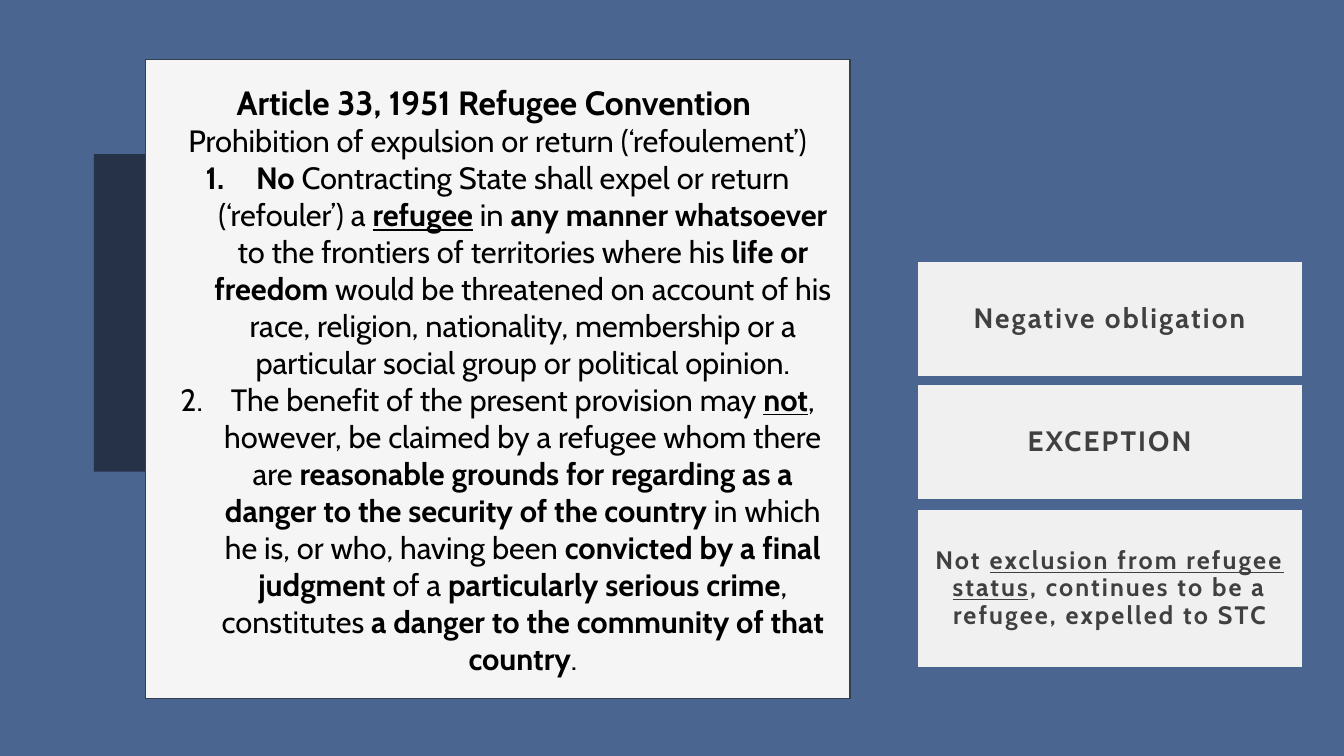
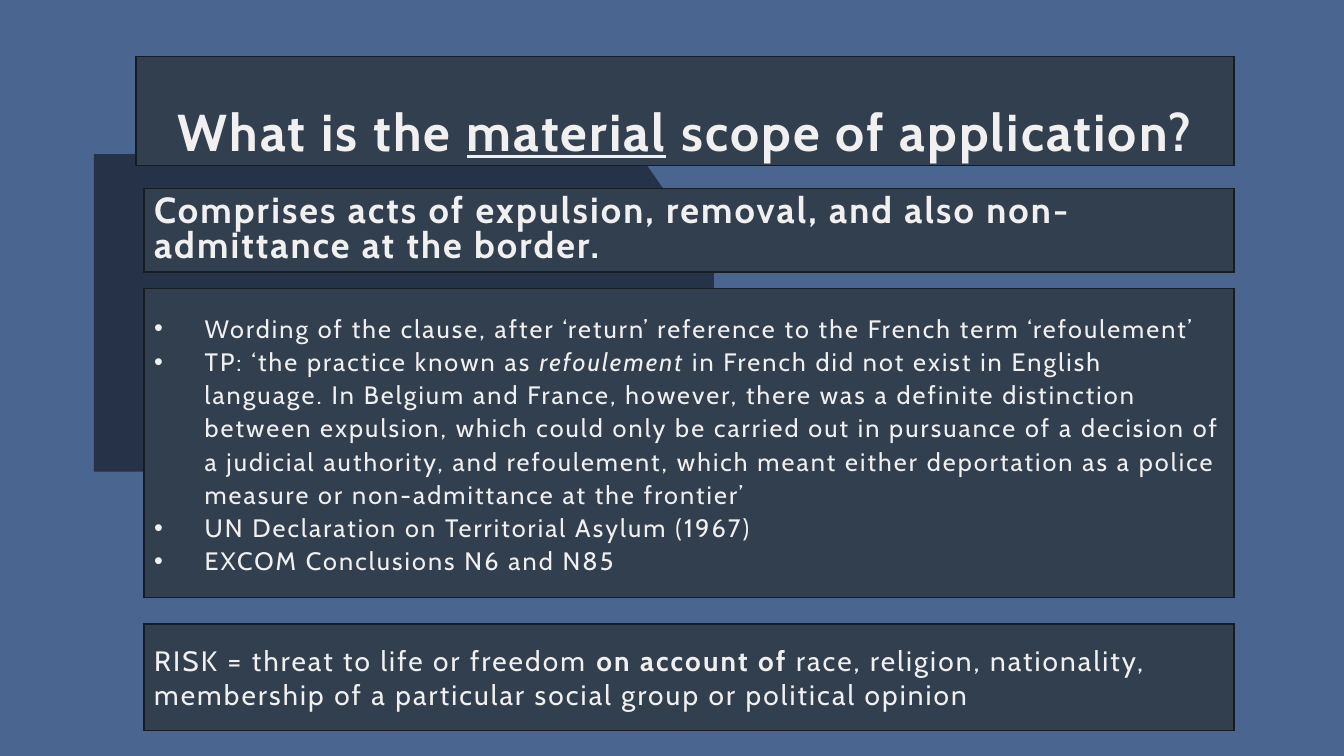
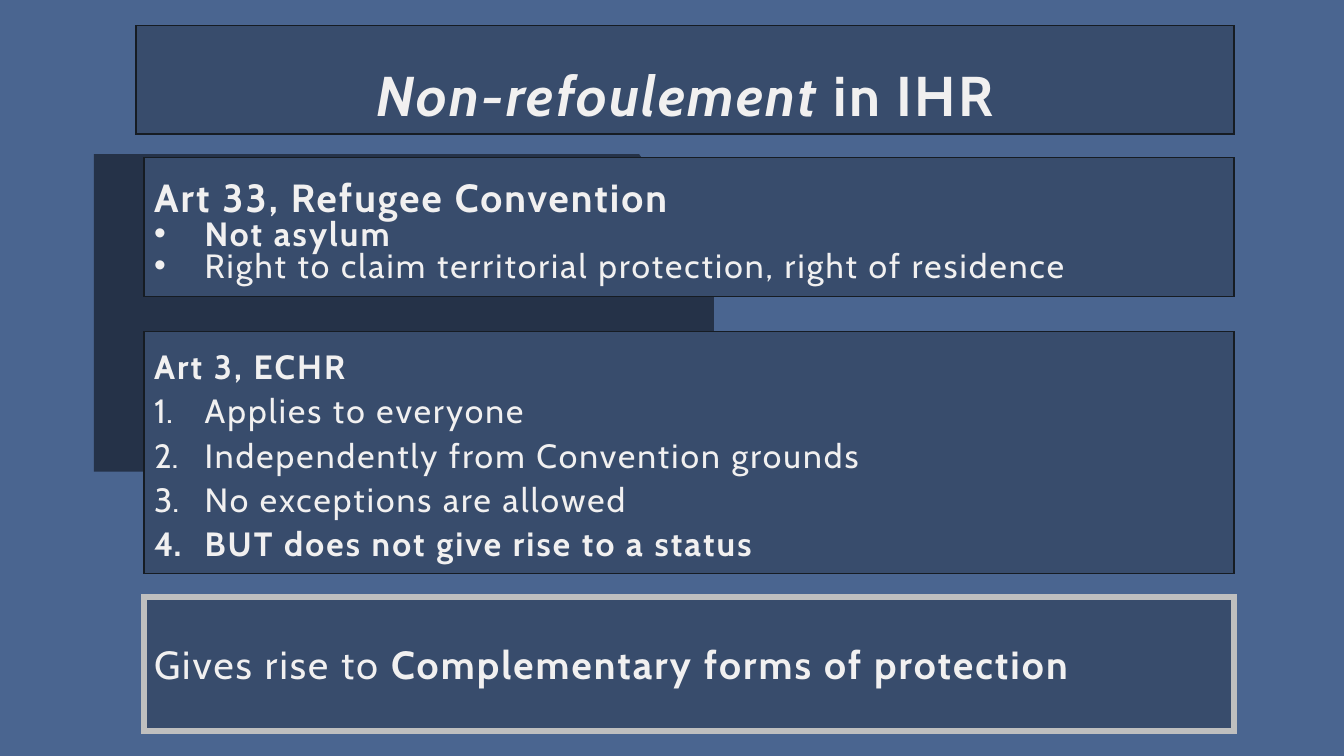
from dataclasses import dataclass

from lxml.etree import SubElement
from pptx import Presentation
from pptx.dml.color import RGBColor
from pptx.enum.shapes import MSO_SHAPE
from pptx.enum.text import MSO_ANCHOR, MSO_AUTO_SIZE, PP_ALIGN
from pptx.oxml.ns import qn
from pptx.util import Pt

PX = 9144  # 100 px to the inch


@dataclass(frozen=True)
class Theme:
    font: str = "Cabin"
    background: RGBColor = RGBColor.from_string("4A6590")
    fold: RGBColor = RGBColor.from_string("253248")
    paper: RGBColor = RGBColor.from_string("F4F5F4")
    light: RGBColor = RGBColor.from_string("F1F0F0")
    slate: RGBColor = RGBColor.from_string("323F4F")
    navy: RGBColor = RGBColor.from_string("384C6C")
    outline: RGBColor = RGBColor.from_string("161C23")
    silver: RGBColor = RGBColor.from_string("BFBFBF")
    black: RGBColor = RGBColor.from_string("000000")
    gray: RGBColor = RGBColor.from_string("404040")
    title: float = 40
    long_title: float = 37
    heading: float = 28
    lead: float = 25.9
    subheading: float = 24
    article: float = 22
    body: float = 20
    small: float = 18
    tracking: int = 150


theme = Theme()


@dataclass
class Para:
    """Spans are (text, style) pairs; a style holds any of the letters b, i and u."""
    spans: list
    size: float
    line_spacing: float = 1.0
    marker: str = ""
    align: PP_ALIGN = PP_ALIGN.LEFT


def style_box(box, rect, fill, line, line_width=1, anchor=MSO_ANCHOR.MIDDLE):
    box.left, box.top, box.width, box.height = [length * PX for length in rect]
    box.fill.solid()
    box.fill.fore_color.rgb = fill
    box.line.color.rgb = line
    box.line.width = Pt(line_width)
    SubElement(box.element.spPr.find(qn("a:ln")), qn("a:miter"), lim="800000")
    frame = box.text_frame
    frame.word_wrap = True
    frame.auto_size = MSO_AUTO_SIZE.NONE
    frame.vertical_anchor = anchor


def write(box, paras, color, tracking=theme.tracking):
    frame = box.text_frame
    for index, para in enumerate(paras):
        paragraph = frame.add_paragraph() if index else frame.paragraphs[0]
        if para.marker:
            properties = paragraph._p.get_or_add_pPr()
            properties.set("marL", str(50 * PX))
            properties.set("indent", str(-50 * PX))
            if para.marker == "1.":
                SubElement(properties, qn("a:buAutoNum"), type="arabicPeriod")
            else:
                SubElement(properties, qn("a:buFont"), typeface="Arial")
                SubElement(properties, qn("a:buChar"), char=para.marker)
        paragraph.alignment = para.align
        paragraph.line_spacing = para.line_spacing
        for text, style in para.spans:
            span = paragraph.add_run()
            span.text = text
            span.font.name = theme.font
            span.font.size = Pt(para.size)
            span.font.color.rgb = color
            span.font.bold = "b" in style
            span.font.italic = "i" in style
            span.font.underline = "u" in style
            if tracking:
                span.font._element.set("spc", str(tracking))


deck = Presentation()
deck.slide_width, deck.slide_height = 1333 * PX, 750 * PX
title_only = deck.slide_layouts[5]
article_page, scope_page, rights_page = [deck.slides.add_slide(title_only) for _ in range(3)]

# Shared: background and dark folded panel behind everything else
background = deck.slide_master.background.fill
background.solid()
background.fore_color.rgb = theme.background
for page in deck.slides:
    outline = page.shapes.build_freeform(93, 153, scale=PX)
    outline.add_line_segments([(634, 153), (708, 259), (708, 468), (93, 468)], close=True)
    fold = outline.convert_to_shape()
    fold.shadow.inherit = False
    fold.fill.solid()
    fold.fill.fore_color.rgb = theme.fold
    fold.line.fill.background()
    page.shapes.element.insert(2, fold.element)

# Slide 1: the article and three remarks
article = article_page.shapes.title
style_box(article, (144, 59, 699, 634), theme.paper, theme.slate)
center = PP_ALIGN.CENTER
write(article, [
    Para([("Article 33, 1951 Refugee Convention ", "b")], theme.subheading, align=center),
    Para([("Prohibition of expulsion or return (‘refoulement’)", "")], theme.article, align=center),
    Para([
        ("No", "b"),
        (" Contracting State shall expel or return (‘refouler’) a ", ""),
        ("refugee", "bu"),
        (" in ", ""),
        ("any manner whatsoever", "b"),
        (" to the frontiers of territories where his ", ""),
        ("life or freedom ", "b"),
        ("would be threatened on account of his race, religion, nationality, "
         "membership or a particular social group or political opinion.", ""),
    ], theme.article, marker="1.", align=center),
    Para([
        ("The benefit of the present provision may ", ""),
        ("not", "bu"),
        (", however, be claimed by a refugee whom there are ", ""),
        ("reasonable grounds for regarding as a danger to the security of the country ", "b"),
        ("in which he is, or who, having been ", ""),
        ("convicted by a final judgment ", "b"),
        ("of a ", ""),
        ("particularly serious crime", "b"),
        (", constitutes ", ""),
        ("a danger to the community of that country", "b"),
        (".", ""),
    ], theme.article, marker="1.", align=center),
], theme.black, tracking=0)

remarks = [
    (258, 117, theme.body, [("Negative obligation", "b")]),
    (380, 117, theme.body, [("EXCEPTION", "b")]),
    (504, 160, theme.small, [
        ("Not ", "b"),
        ("exclusion from refugee status", "bu"),
        (", continues to be a refugee, expelled to STC", "b"),
    ]),
]
for top, height, size, spans in remarks:
    remark = article_page.shapes.add_shape(MSO_SHAPE.RECTANGLE, 0, 0, PX, PX)
    remark.shadow.inherit = False
    style_box(remark, (908, top, 385, height), theme.light, theme.background, 3)
    write(remark, [Para(spans, size, 0.9, align=center)], theme.gray)

# Slides 2 and 3: a title bar above full-width panels
scope_title = Para([
    ("What is the ", "b"), ("material", "bu"), (" scope of application?", "b"),
], theme.long_title, 0.7, align=center)
scope_bullets = [
    [("Wording of the clause, after ‘return’ reference to the French term ‘refoulement’", "")],
    [
        ("TP: ‘the practice known as ", ""),
        ("refoulement ", "i"),
        ("in French did not exist in English language. In Belgium and France, however, "
         "there was a definite distinction between expulsion, which could only be carried "
         "out in pursuance of a decision of a judicial authority, and refoulement, which "
         "meant either deportation as a police measure or non-admittance at the frontier’", ""),
    ],
    [("UN Declaration on Territorial Asylum (1967)", "")],
    [("EXCOM Conclusions N6 and N85", "")],
]
scope_panels = [
    (187, 83, [Para([("Comprises acts of expulsion, removal, and also non-admittance "
                      "at the border.", "b")], theme.lead, 0.8)]),
    (286, 307, [Para(spans, theme.small, 1.1, "•") for spans in scope_bullets]),
    (619, 106, [Para([
        ("RISK = threat to life or freedom ", ""),
        ("on account of ", "b"),
        ("race, religion, nationality, membership of a particular social group "
         "or political opinion", ""),
    ], theme.body)]),
]

rights_title = Para([("Non-refoulement ", "bi"), ("in IHR", "b")], theme.title, 0.9, align=center)
echr_points = [
    ("Applies to everyone", ""),
    ("Independently from Convention grounds", ""),
    ("No exceptions are allowed", ""),
    ("BUT does not give rise to a status", "b"),
]
rights_panels = [
    (156, 138, [
        Para([("Art 33, Refugee Convention", "b")], theme.heading, 1.1),
        Para([("Not asylum", "b")], theme.subheading, 0.8, "•"),
        Para([("Right to claim territorial protection, right of residence", "")],
             theme.subheading, 0.8, "•"),
    ]),
    (329, 240, [Para([("Art 3, ECHR", "b")], theme.subheading, 1.1)]
     + [Para([point], theme.subheading, 1.1, "1.") for point in echr_points]),
    (592, 133, [Para([("Gives rise to ", ""), ("Complementary forms of protection", "b")],
                     theme.heading)]),
]

for page, fill, title_top, title, panels in [
    (scope_page, theme.slate, 56, scope_title, scope_panels),
    (rights_page, theme.navy, 25, rights_title, rights_panels),
]:
    style_box(page.shapes.title, (135, title_top, 1089, 108), fill, theme.outline,
              anchor=MSO_ANCHOR.BOTTOM)
    write(page.shapes.title, [title], theme.light)
    for top, height, paras in panels:
        panel = page.shapes.add_shape(MSO_SHAPE.RECTANGLE, 0, 0, PX, PX)
        panel.shadow.inherit = False
        style_box(panel, (143, top, 1081, height), fill, theme.outline)
        write(panel, paras, theme.light)

# The closing panel of slide 3 has a heavier frame
panel.line.color.rgb = theme.silver
panel.line.width = Pt(4.5)

deck.save("out.pptx")
